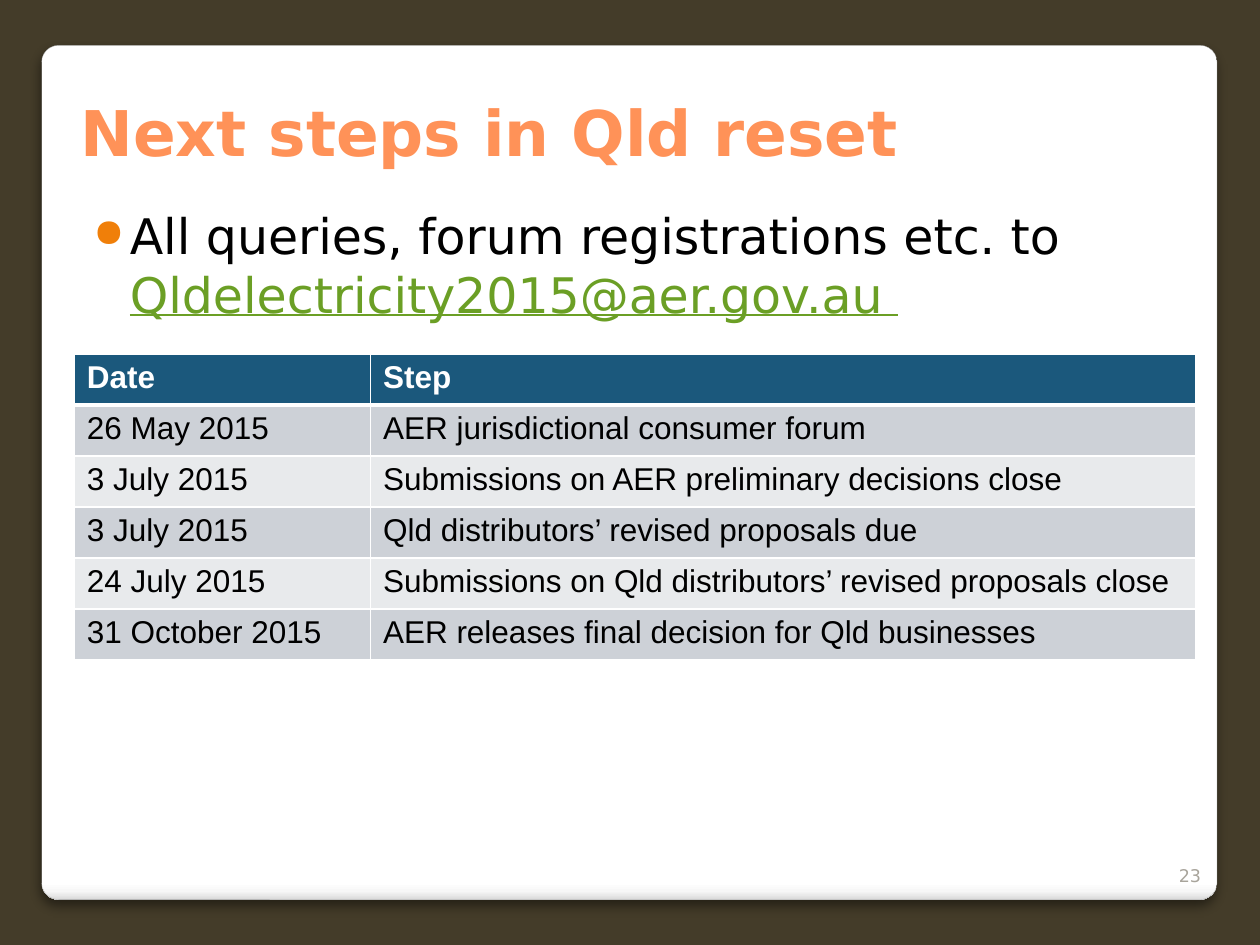
from dataclasses import dataclass

from pptx import Presentation
from pptx import util as u
from pptx.dml.color import RGBColor
from pptx.enum import shapes, text
from pptx.oxml import parse_xml
from pptx.oxml.ns import nsdecls, qn

I = u.Inches
NS = nsdecls("a")


@dataclass(frozen=True)
class Theme:
    heading_font: str = "DejaVu Sans"
    table_font: str = "Arial"
    title_size: int = 36
    body_size: int = 28
    table_size: int = 18
    number_size: int = 10
    background: str = "443C29"
    card_stops: tuple = ((0, "FFFFFF"), (98, "FFFFFF"), (99, "F7F7F7"), (100, "DADADA"))
    card_line: str = "A4A4A4"
    title: str = "FF9258"
    text: str = "000000"
    link: str = "6B9F25"
    bullet: str = "F07F09"
    number: str = "A8A49B"
    header: str = "1B587C"
    bands: tuple = ("CDD1D7", "E8EAEC")
    white: str = "FFFFFF"


def rgb(value):
    return RGBColor.from_string(value)


class SlideBuilder:
    def __init__(self, prs, theme):
        self.t = theme
        self.s = prs.slides.add_slide(prs.slide_layouts[6])
        fill = self.s.background.fill
        fill.solid()
        fill.fore_color.rgb = rgb(theme.background)

    def run(self, p, words, font, size, color, bold=False, underline=False):
        r = p.add_run()
        r.text = words
        r.font.name = font
        r.font.size = u.Pt(size)
        r.font.color.rgb = rgb(color)
        r.font.bold = bold
        r.font.underline = underline

    def card(self, x, y, w, h):
        sp = self.s.shapes.add_shape(
            shapes.MSO_SHAPE.ROUNDED_RECTANGLE, I(x), I(y), I(w), I(h))
        sp.adjustments[0] = 0.02
        sp.line.color.rgb = rgb(self.t.card_line)
        sp.line.width = u.Pt(0.16)
        sp.shadow.inherit = False
        stops = "".join(
            f'<a:gs pos="{pos * 1000}"><a:srgbClr val="{color}"/></a:gs>'
            for pos, color in self.t.card_stops)
        sp_pr = sp._element.spPr
        sp_pr.find(qn("a:prstGeom")).addnext(parse_xml(
            f'<a:gradFill {NS} rotWithShape="1"><a:gsLst>{stops}</a:gsLst>'
            '<a:lin ang="5400000" scaled="0"/></a:gradFill>'))
        sp_pr.find(qn("a:effectLst")).append(parse_xml(
            f'<a:outerShdw {NS} blurRad="{u.Pt(6)}" dist="{u.Pt(4)}" dir="5400000" '
            'algn="tl" rotWithShape="0"><a:srgbClr val="000000">'
            '<a:alpha val="45000"/></a:srgbClr></a:outerShdw>'))

    def textbox(self, x, y, w, h, anchor=text.MSO_ANCHOR.BOTTOM):
        tf = self.s.shapes.add_textbox(I(x), I(y), I(w), I(h)).text_frame
        tf.word_wrap = True
        tf.vertical_anchor = anchor
        return tf

    def title(self, words, *box):
        p = self.textbox(*box).paragraphs[0]
        self.run(p, words, self.t.heading_font, self.t.title_size, self.t.title, bold=True)

    def page_number(self, words, *box):
        p = self.textbox(*box).paragraphs[0]
        p.alignment = text.PP_ALIGN.RIGHT
        self.run(p, words, self.t.heading_font, self.t.number_size, self.t.number)

    def bullet(self, words, address, *box):
        tf = self.textbox(*box, anchor=text.MSO_ANCHOR.TOP)
        tf.margin_left, tf.margin_top = I(0.2), I(0.1)
        p = tf.paragraphs[0]
        p_pr = p._p.get_or_add_pPr()
        p_pr.set("marL", str(I(0.29)))
        p_pr.set("indent", str(I(-0.29)))
        for xml in (
            f'<a:buClr {NS}><a:srgbClr val="{self.t.bullet}"/></a:buClr>',
            f'<a:buSzPct {NS} val="80000"/>',
            f'<a:buChar {NS} char="●"/>',
        ):
            p_pr.append(parse_xml(xml))
        font, size = self.t.heading_font, self.t.body_size
        self.run(p, words, font, size, self.t.text)
        self.run(p, address, font, size, self.t.link, underline=True)

    def borders(self, cell, bottom):
        tc_pr = cell._tc.get_or_add_tcPr()
        for i, (side, width) in enumerate(
                (("L", 1), ("R", 1), ("T", 1), ("B", bottom))):
            tc_pr.insert(i, parse_xml(
                f'<a:ln{side} {NS} w="{u.Pt(width)}"><a:solidFill>'
                f'<a:srgbClr val="{self.t.white}"/></a:solidFill></a:ln{side}>'))

    def table(self, rows, widths, x, y, h):
        tbl = self.s.shapes.add_table(
            len(rows), len(widths), I(x), I(y), I(sum(widths)), I(h)).table
        for col, width in zip(tbl.columns, widths):
            col.width = I(width)
        for i, row in enumerate(rows):
            head = i == 0
            for j, words in enumerate(row):
                cell = tbl.cell(i, j)
                cell.fill.solid()
                cell.fill.fore_color.rgb = rgb(
                    self.t.header if head else self.t.bands[(i - 1) % 2])
                self.borders(cell, 3 if head else 1)
                self.run(cell.text_frame.paragraphs[0], words, self.t.table_font,
                         self.t.table_size, self.t.white if head else self.t.text,
                         bold=head)


def main():
    prs = Presentation()
    prs.slide_width, prs.slide_height = I(10), I(7.5)
    slide = SlideBuilder(prs, Theme())
    slide.card(0.33, 0.36, 9.33, 6.78)
    slide.page_number("23", 9.13, 6.68, 0.5, 0.4)
    slide.title("Next steps in Qld reset", 0.54, 0.6, 8.95, 0.79)
    slide.bullet("All queries, forum registrations etc. to ",
                 "Qldelectricity2015@aer.gov.au ", 0.54, 1.53, 8.95, 4.97)
    steps = [
        ("Date", "Step"),
        ("26 May 2015", "AER jurisdictional consumer forum"),
        ("3 July 2015", "Submissions on AER preliminary decisions close"),
        ("3 July 2015", "Qld distributors’ revised proposals due"),
        ("24 July 2015", "Submissions on Qld distributors’ revised proposals close"),
        ("31 October 2015", "AER releases final decision for Qld businesses"),
    ]
    slide.table(steps, (2.35, 6.55), 0.59, 2.81, 2.43)
    prs.save("out.pptx")


if __name__ == "__main__":
    main()
